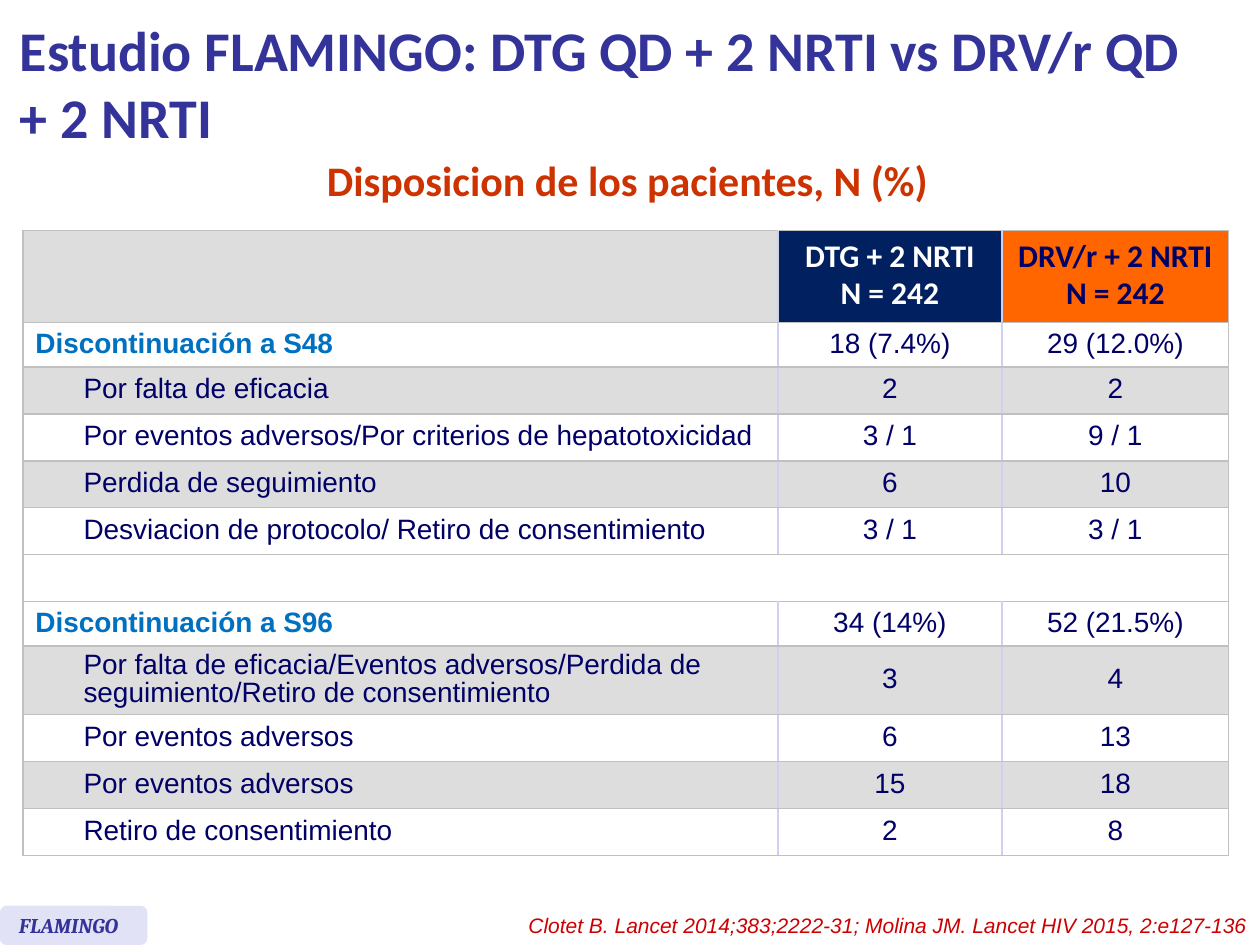
from dataclasses import dataclass

from lxml import etree
from pptx import Presentation
from pptx import util as u
from pptx.dml.color import RGBColor
from pptx.enum import shapes, text
from pptx.oxml import ns

Cm, Pt = u.Cm, u.Pt
LEFT, MID, RIGHT = text.PP_ALIGN.LEFT, text.PP_ALIGN.CENTER, text.PP_ALIGN.RIGHT
PLAIN = "{2D5ABB26-0587-4C30-8999-92F81FD0307C}"


@dataclass(frozen=True)
class Theme:
    ink: str = "000066"
    title: str = "333399"
    accent: str = "CC3300"
    cite: str = "CC0000"
    group: str = "0070C0"
    navy: str = "002060"
    orange: str = "FF6600"
    white: str = "FFFFFF"
    band: str = "DDDDDD"
    badge: str = "E2E2F6"
    grey: str = "C0C0C0"
    lilac: str = "D0D0F0"
    sans: str = "Arial"
    head: str = "Calibri"
    serif: str = "Cambria"
    big: int = 32
    sub: int = 24
    top: int = 18
    body: int = 16
    small: int = 12


T = Theme()

HEADS = [
    ("DTG + 2 NRTI\nN = 242", T.white, T.navy),
    ("DRV/r + 2 NRTI\nN = 242", T.ink, T.orange),
]
ROWS = [
    ("group", "Discontinuación a S48", "18 (7.4%)", "29 (12.0%)"),
    ("item", "Por falta de eficacia", "2", "2"),
    ("item", "Por eventos adversos/Por criterios de hepatotoxicidad", "3 / 1", "9 / 1"),
    ("item", "Perdida de seguimiento", "6", "10"),
    ("item", "Desviacion de protocolo/ Retiro de consentimiento", "3 / 1", "3 / 1"),
    ("gap",),
    ("group", "Discontinuación a S96", "34 (14%)", "52 (21.5%)"),
    ("item", "Por falta de eficacia/Eventos adversos/Perdida de "
             "seguimiento/Retiro de consentimiento", "3", "4"),
    ("item", "Por eventos adversos", "6", "13"),
    ("item", "Por eventos adversos", "15", "18"),
    ("item", "Retiro de consentimiento", "2", "8"),
]


def write(frame, words, size=T.body, font=T.sans, color=T.ink, bold=False,
          slant=False, align=LEFT, lead=None, gap=0):
    for i, line in enumerate(words.split("\n")):
        para = frame.add_paragraph() if i else frame.paragraphs[0]
        para.text = line
        para.alignment = align
        if lead:
            para.line_spacing = lead
        if i:
            para.space_before = Pt(gap)
        for run in para.runs:
            face = run.font
            face.size, face.name = Pt(size), font
            face.bold, face.italic = bold, slant
            face.color.rgb = RGBColor.from_string(color)
        if not line:
            end = etree.SubElement(para._p, ns.qn("a:endParaRPr"))
            end.set("sz", str(size * 100))


def label(slide, words, x, y, w, h, anchor=text.MSO_ANCHOR.TOP, **style):
    frame = slide.shapes.add_textbox(Cm(x), Cm(y), Cm(w), Cm(h)).text_frame
    frame.word_wrap = True
    frame.vertical_anchor = anchor
    write(frame, words, **style)


def badge(slide, x, y, w, h):
    shape = slide.shapes.add_shape(
        shapes.MSO_SHAPE.ROUNDED_RECTANGLE, Cm(x), Cm(y), Cm(w), Cm(h))
    shape.shadow.inherit = False
    shape.fill.solid()
    shape.fill.fore_color.rgb = RGBColor.from_string(T.badge)
    shape.line.fill.background()


def edge(cell, side, color):
    line = etree.SubElement(cell._tc.get_or_add_tcPr(), ns.qn("a:ln" + side))
    line.set("w", str(Pt(1)))
    if color is None:
        etree.SubElement(line, ns.qn("a:noFill"))
        return
    fill = etree.SubElement(line, ns.qn("a:solidFill"))
    etree.SubElement(fill, ns.qn("a:srgbClr")).set("val", color)


def put(grid, row, first, last, words, fill, **style):
    cell = grid.cell(row, first)
    if last > first:
        cell.merge(grid.cell(row, last))
    sides = [T.grey, None, T.lilac, T.lilac, T.grey]
    edge(cell, "L", sides[first])
    edge(cell, "R", sides[last + 1])
    edge(cell, "T", T.grey)
    edge(cell, "B", T.grey)
    for col in range(first, last + 1):
        part = grid.cell(row, col)
        part.fill.solid()
        part.fill.fore_color.rgb = RGBColor.from_string(fill)
        part.vertical_anchor = text.MSO_ANCHOR.MIDDLE
        write(part.text_frame, words if col == first else "", **style)


def chart(slide, x, y, widths, top, step):
    count = len(ROWS) + 1
    frame = slide.shapes.add_table(
        count, len(widths), Cm(x), Cm(y), Cm(sum(widths)), Cm(top + step * len(ROWS)))
    grid = frame.table
    grid.first_row = grid.horz_banding = False
    grid._tbl.tblPr.find(ns.qn("a:tableStyleId")).text = PLAIN
    for col, width in zip(grid.columns, widths):
        col.width = Cm(width)
    for i, row in enumerate(grid.rows):
        row.height = Cm(step if i else top)

    put(grid, 0, 0, 1, "", T.band)
    for col, (words, color, fill) in enumerate(HEADS, 2):
        put(grid, 0, col, col, words, fill, size=T.top, font=T.head, color=color,
            bold=True, align=MID, lead=0.8, gap=3.6)

    dark = False
    for i, (kind, *words) in enumerate(ROWS, 1):
        dark = kind == "item" and not dark
        fill = T.band if dark else T.white
        if kind == "gap":
            put(grid, i, 0, 3, "", fill)
            continue
        if kind == "group":
            put(grid, i, 0, 1, words[0], fill, color=T.group, bold=True, lead=0.9)
        else:
            put(grid, i, 0, 0, "", fill)
            put(grid, i, 1, 1, words[0], fill, lead=0.9)
        for col, value in enumerate(words[1:], 2):
            put(grid, i, col, col, value, fill, align=MID, lead=0.9)


def main():
    deck = Presentation()
    deck.slide_width, deck.slide_height = Cm(25.4), Cm(19.05)
    slide = deck.slides.add_slide(deck.slide_layouts[6])
    chart(slide, 0.46, 4.65, [0.97, 14.25, 4.52, 4.57], 1.85, 0.9)
    label(slide, "Disposicion de los pacientes, N (%)", 2.7, 3.48, 19.9, 0.8,
          size=T.sub, font=T.head, color=T.accent, bold=True, align=MID,
          lead=Pt(15.2))
    badge(slide, 0, 18.26, 2.97, 0.79)
    label(slide, "FLAMINGO", 0.13, 18.28, 2.84, 0.77, size=T.small, font=T.serif,
          color=T.title, bold=True, slant=True)
    label(slide, "Estudio FLAMINGO: DTG QD + 2 NRTI vs DRV/r QD\v+ 2 NRTI",
          0.15, 0.13, 24.26, 3.07, anchor=text.MSO_ANCHOR.MIDDLE, size=T.big,
          font=T.head, color=T.title, bold=True)
    label(slide, "Clotet B. Lancet 2014;383;2222-31; Molina JM. Lancet HIV 2015, 2:e127-136",
          9.25, 18.28, 16.15, 0.77, size=T.small, color=T.cite, slant=True,
          align=RIGHT)
    deck.save("out.pptx")


if __name__ == "__main__":
    main()
